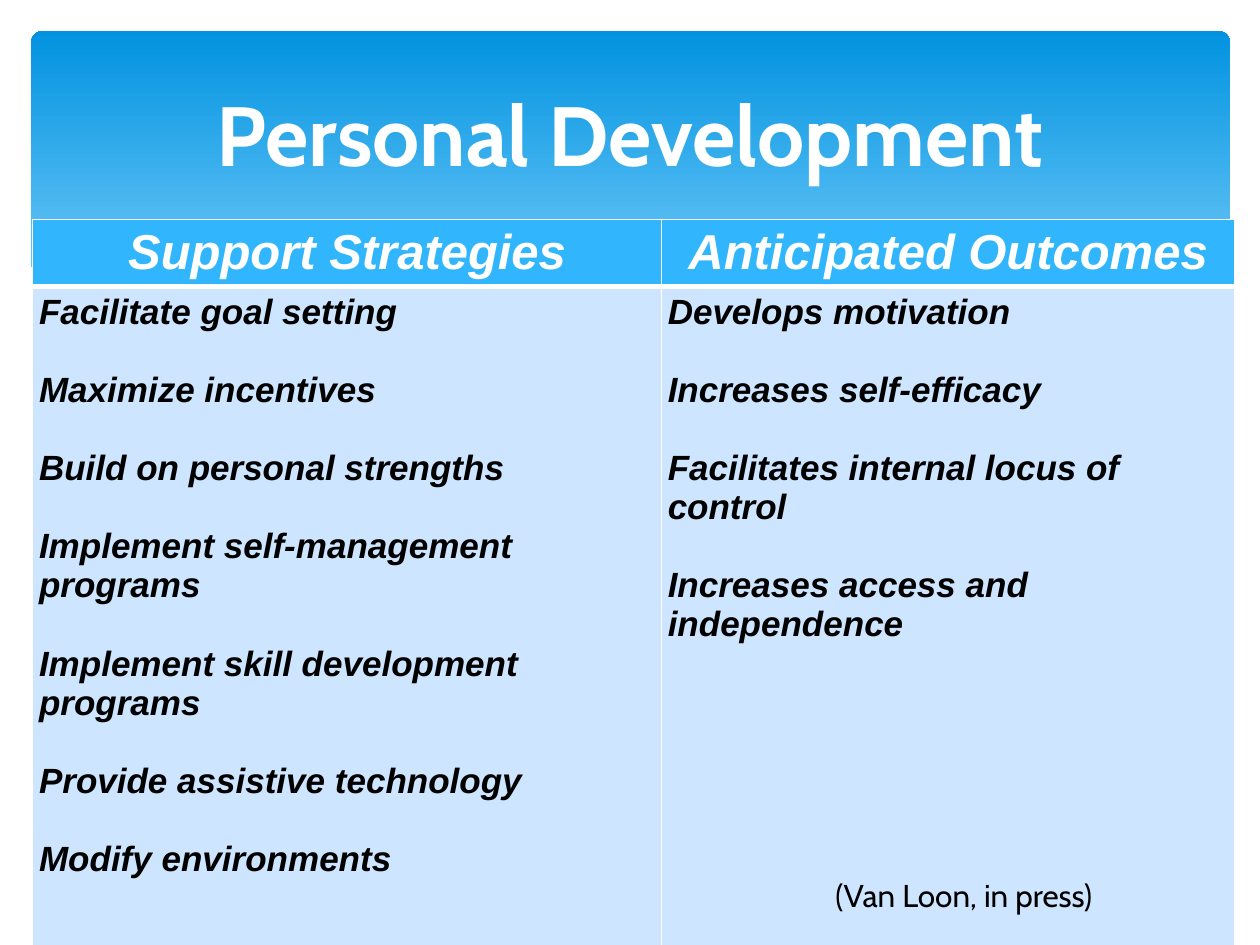
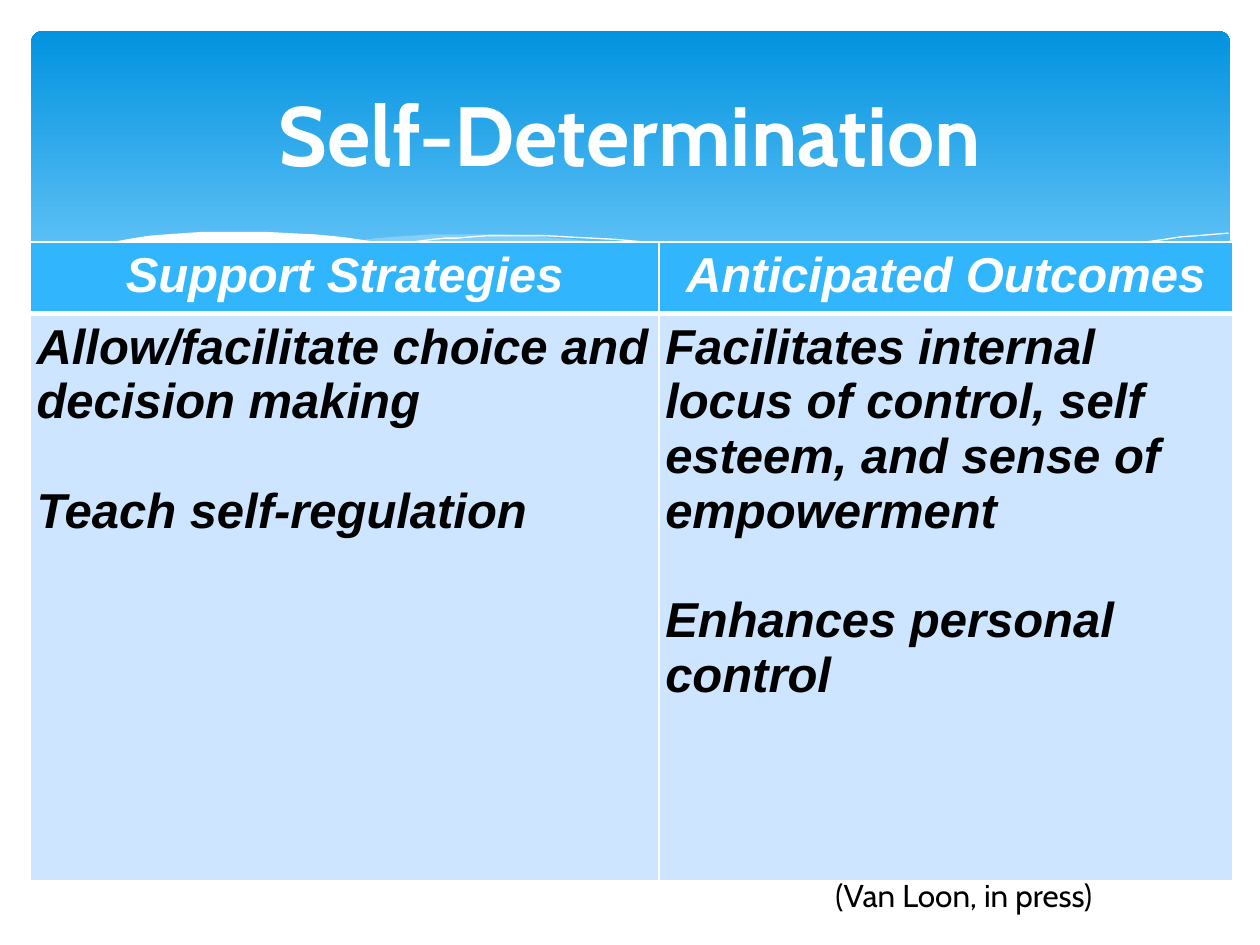
from lxml.etree import SubElement
from pptx import Presentation
from pptx.dml.color import RGBColor
from pptx.enum.shapes import MSO_SHAPE as Shape
from pptx.enum.text import MSO_ANCHOR as Anchor, PP_ALIGN as Align
from pptx.oxml import parse_xml
from pptx.oxml.ns import nsdecls, qn
from pptx.util import Pt

PX = 9144
WHITE = RGBColor(0xFF, 0xFF, 0xFF)
BLACK = RGBColor(0, 0, 0)
BAND_LIGHT = RGBColor(0x83, 0xD3, 0xFE)
BAND_DARK = RGBColor(0x02, 0x93, 0xE0)
WAVE_BLUE = RGBColor(0xC6, 0xE7, 0xFC)
HEADER_BLUE = RGBColor(0x31, 0xB6, 0xFD)
BODY_BLUE = RGBColor(0xCD, 0xE5, 0xFE)
TITLE_FONT = "Cabin"
TABLE_FONT = "Arial"
LINE_HEIGHT = 1.117
INSET = 5

COLUMN_WIDTHS = (499, 455)
HEADINGS = ("Support Strategies", "Anticipated Outcomes")
CITATION = "(Van Loon, in press)"

RIGHT_WAVE = [
    (975, 200), (962, 202), (948, 204), (935, 207), (921, 210), (906, 213), (891, 216),
    (876, 220), (861, 223), (832, 230), (805, 237), (779, 243), (753, 248), (729, 253),
    (706, 257), (683, 262), (661, 265), (676, 267), (691, 269), (705, 271), (718, 273),
    (732, 274), (745, 275), (757, 276), (769, 277), (792, 277), (814, 278), (835, 277),
    (854, 276), (872, 274), (889, 272), (905, 269), (921, 265), (935, 262), (949, 257),
    (963, 252), (976, 247), (976, 200),
]
MIDDLE_WAVE = [
    (893, 273), (879, 271), (866, 269), (837, 265), (807, 260), (775, 254), (741, 248),
    (706, 240), (668, 231), (629, 222), (598, 214), (569, 208), (541, 203), (514, 198),
    (489, 194), (464, 191), (441, 189), (420, 187), (399, 186), (361, 186), (344, 186),
    (328, 187), (313, 188), (299, 189), (286, 191), (304, 194), (323, 196), (342, 199),
    (362, 203), (383, 207), (404, 211), (427, 216), (449, 222), (491, 232), (530, 240),
    (566, 248), (601, 255), (634, 261), (665, 266), (695, 270), (722, 274), (748, 276),
    (773, 278), (796, 279), (818, 279), (838, 278), (857, 277), (884, 274),
]
FALLING_LINE = [
    (309, 195), (318, 194), (328, 192), (343, 190), (353, 189), (363, 189), (374, 188),
    (387, 187), (416, 187), (433, 187), (450, 188), (469, 189), (489, 190), (510, 192),
    (532, 194), (556, 197), (582, 200), (608, 204), (636, 208), (665, 213), (695, 219),
    (727, 226), (760, 233), (795, 242), (831, 251), (868, 261), (907, 272),
]
RISING_LINE = [
    (613, 257), (624, 254), (652, 246), (672, 241), (695, 235), (720, 229), (748, 223),
    (776, 216), (806, 210), (836, 204), (866, 199), (881, 196), (895, 194), (910, 192),
    (924, 190), (937, 188), (951, 187), (963, 186), (975, 185),
]
WHITE_WAVE = [
    (977, 246), (968, 250), (959, 253), (950, 256), (940, 259), (930, 262), (920, 265),
    (910, 267), (899, 269), (887, 271), (875, 273), (863, 274), (850, 275), (837, 276),
    (823, 277), (809, 277), (793, 276), (778, 276), (761, 275), (744, 274), (726, 272),
    (708, 270), (688, 268), (668, 265), (647, 262), (626, 258), (603, 254), (579, 250),
    (555, 245), (529, 239), (503, 233), (475, 227), (447, 220), (418, 213), (391, 207),
    (365, 202), (339, 197), (315, 194), (292, 191), (271, 188), (250, 186), (230, 185),
    (211, 184), (193, 184), (176, 184), (161, 184), (146, 185), (132, 186), (119, 187),
    (106, 189), (95, 191), (85, 193), (75, 195), (67, 197), (59, 199), (52, 201),
    (46, 203), (40, 205), (29, 210), (23, 213), (23, 329), (977, 329),
]


def write_text(frame, lines, font, size, color, bold=False, italic=False,
               align=Align.LEFT, gap=0):
    for index, line in enumerate(lines):
        para = frame.add_paragraph() if index else frame.paragraphs[0]
        para.alignment = align
        if index and gap:
            para.space_before = Pt(gap)
        span = para.add_run()
        span.text = line
        span.font.name = font
        span.font.size = Pt(size)
        span.font.bold = bold
        span.font.italic = italic
        span.font.color.rgb = color


def set_margins(holder):
    holder.margin_left = holder.margin_right = INSET * PX
    holder.margin_top = holder.margin_bottom = INSET * PX


def add_text_box(page, left, top, width, height, text, anchor=Anchor.TOP, **style):
    box = page.shapes.add_textbox(left * PX, top * PX, width * PX, height * PX)
    frame = box.text_frame
    frame.word_wrap = True
    frame.vertical_anchor = anchor
    set_margins(frame)
    write_text(frame, [text], font=TITLE_FONT, **style)


def add_band(page):
    band = page.shapes.add_shape(Shape.ROUNDED_RECTANGLE, 25 * PX, 25 * PX, 951 * PX, 270 * PX)
    band.adjustments[0] = 0.03
    band.shadow.inherit = False
    band.line.fill.background()
    band.fill.gradient()
    band.fill.gradient_angle = 90
    stops = ((0.1, BAND_LIGHT), (1, BAND_DARK))
    for stop, (position, color) in zip(band.fill.gradient_stops, stops):
        stop.position = position
        stop.color.rgb = color


def add_curve(page, points, closed):
    builder = page.shapes.build_freeform(*points[0], scale=PX)
    builder.add_line_segments(points[1:], close=closed)
    curve = builder.convert_to_shape()
    curve.shadow.inherit = False
    return curve


def add_wave(page, points, color, opacity=100):
    wave = add_curve(page, points, closed=True)
    wave.line.fill.background()
    wave.fill.solid()
    wave.fill.fore_color.rgb = color
    if opacity < 100:
        color_node = next(wave.fill._xPr.iter(qn("a:srgbClr")))
        SubElement(color_node, qn("a:alpha"), val=str(opacity * 1000))


def add_wave_line(page, points):
    wave_line = add_curve(page, points, closed=False)
    wave_line.fill.background()
    wave_line.line.color.rgb = WHITE
    wave_line.line.width = Pt(0.75)


def add_backdrop(page):
    add_band(page)
    add_wave(page, RIGHT_WAVE, WAVE_BLUE, opacity=29)
    add_wave(page, MIDDLE_WAVE, WAVE_BLUE, opacity=40)
    add_wave_line(page, FALLING_LINE)
    add_wave_line(page, RISING_LINE)
    add_wave(page, WHITE_WAVE, WHITE)


def set_borders(cell, **widths):
    properties = cell._tc.get_or_add_tcPr()
    for index, side in enumerate("LRTB"):
        width = Pt(widths.get(side, 1))
        properties.insert(index, parse_xml(
            f'<a:ln{side} {nsdecls("a")} w="{width}"><a:solidFill>'
            f'<a:srgbClr val="{WHITE}"/></a:solidFill></a:ln{side}>'))


def fill_cell(cell, lines, fill, borders, **style):
    set_margins(cell)
    cell.fill.solid()
    cell.fill.fore_color.rgb = fill
    set_borders(cell, **borders)
    write_text(cell.text_frame, lines, font=TABLE_FONT, bold=True, italic=True, **style)


def add_strategy_table(page, left, top, row_heights, columns, size):
    table = page.shapes.add_table(2, 2, left * PX, top * PX, sum(COLUMN_WIDTHS) * PX,
                                  sum(row_heights) * PX).table
    for row, height in zip(table.rows, row_heights):
        row.height = height * PX
    for index, width in enumerate(COLUMN_WIDTHS):
        table.columns[index].width = width * PX
        fill_cell(table.cell(0, index), [HEADINGS[index]], HEADER_BLUE, {"B": 3},
                  size=28, color=WHITE, align=Align.CENTER)
        fill_cell(table.cell(1, index), columns[index], BODY_BLUE, {"T": 3},
                  size=size, color=BLACK, gap=size * LINE_HEIGHT)


def add_strategy_page(deck, title, **table):
    page = deck.slides.add_slide(deck.slide_layouts[6])
    add_backdrop(page)
    add_strategy_table(page, **table)
    add_text_box(page, 50, 37, 900, 137, title, anchor=Anchor.MIDDLE,
                 size=48, color=WHITE, bold=True, align=Align.CENTER)
    add_text_box(page, 658, 690, 302, 39, CITATION, size=18, color=BLACK)


def main():
    deck = Presentation()
    deck.slide_width = 1000 * PX
    deck.slide_height = 750 * PX
    add_strategy_page(
        deck, "Personal Development", left=26, top=174, row_heights=(49, 527), size=20,
        columns=(
            ["Facilitate goal setting", "Maximize incentives", "Build on personal strengths",
             "Implement self-management programs", "Implement skill development programs",
             "Provide assistive technology", "Modify environments"],
            ["Develops motivation", "Increases self-efficacy",
             "Facilitates internal locus of control", "Increases access and independence"],
        ))
    add_strategy_page(
        deck, "Self-Determination", left=24, top=192, row_heights=(57, 450), size=28,
        columns=(
            ["Allow/facilitate choice and decision making", "Teach self-regulation"],
            ["Facilitates internal locus of control, self esteem, and sense of empowerment",
             "Enhances personal control"],
        ))
    deck.save("out.pptx")


if __name__ == "__main__":
    main()
